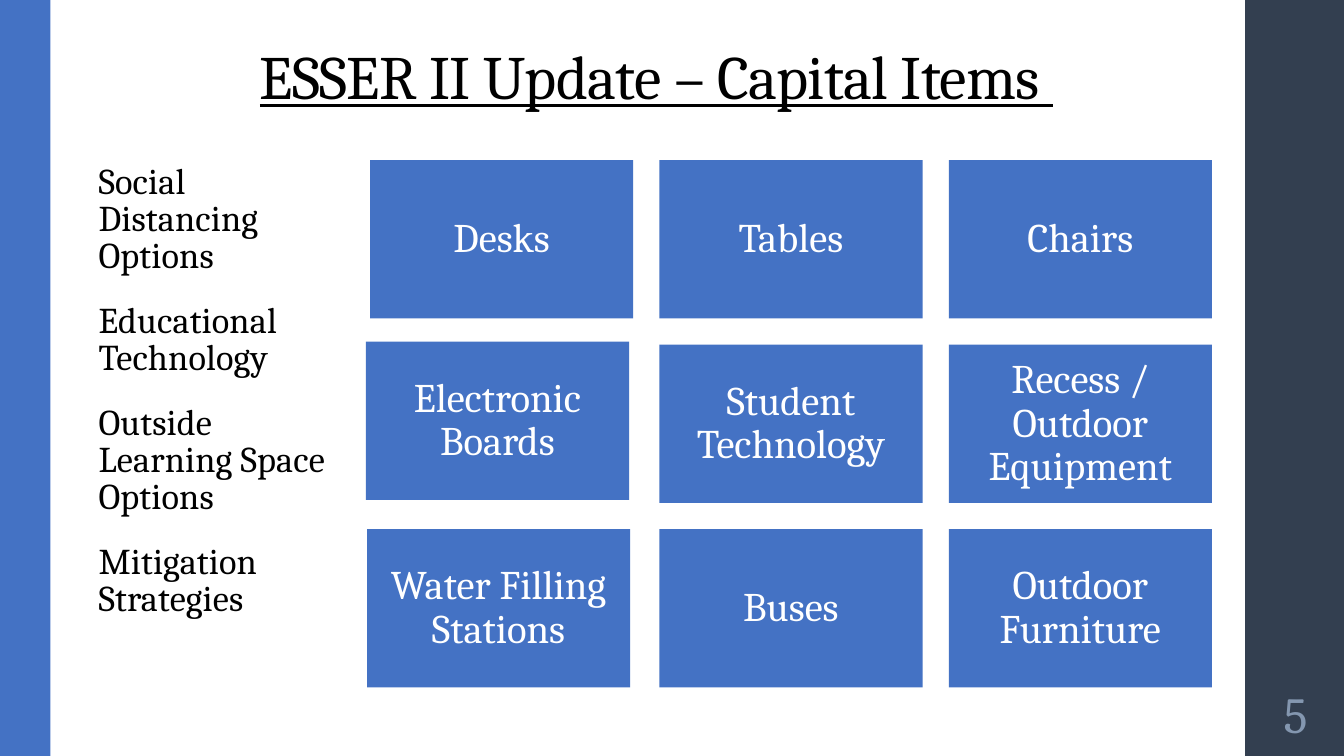
from pptx import Presentation
from pptx.dml.color import RGBColor
from pptx.enum.shapes import MSO_SHAPE
from pptx.enum.text import MSO_ANCHOR, PP_ALIGN
from pptx.util import Inches, Pt

COLORS = {
    "blue": "4472C4",
    "navy": "333F50",
    "number": "8497B0",
    "white": "FFFFFF",
    "black": "000000",
}
FONT = "Cambria"

TITLE = "ESSER II Update – Capital Items "
STRATEGIES = [
    "Social Distancing Options",
    "Educational Technology",
    "Outside Learning Space Options",
    "Mitigation Strategies",
]
CAPITAL_ITEMS = [
    ["Desks", "Tables", "Chairs"],
    ["Electronic Boards", "Student Technology", "Recess / Outdoor Equipment"],
    ["Water Filling Stations", "Buses", "Outdoor Furniture"],
]
# Small shifts (x, y) of the first tile in each row
FIRST_TILE_SHIFTS = [(0, 0), (-0.04, -0.03), (-0.03, 0)]
TILE_WIDTH, TILE_HEIGHT, TILE_GAP = 2.61, 1.57, 0.26


def add_block(slide, box, color):
    """Add a plain filled rectangle."""
    block = slide.shapes.add_shape(MSO_SHAPE.RECTANGLE, *map(Inches, box))
    block.shadow.inherit = False
    block.fill.solid()
    block.fill.fore_color.rgb = RGBColor.from_string(COLORS[color])
    block.line.fill.background()
    return block


def write_text(holder, paragraphs, *, size, color, align=PP_ALIGN.CENTER,
               anchor=MSO_ANCHOR.MIDDLE, margins=(0.1, 0.05), line_spacing=1.0,
               before=0, after=0, underline=False, tracking=0):
    """Fill a shape with one run per paragraph."""
    frame = holder.text_frame
    frame.word_wrap = True
    frame.vertical_anchor = anchor
    frame.margin_left = frame.margin_right = Inches(margins[0])
    frame.margin_top = frame.margin_bottom = Inches(margins[1])
    for index, text in enumerate(paragraphs):
        paragraph = frame.add_paragraph() if index else frame.paragraphs[0]
        paragraph.alignment = align
        paragraph.line_spacing = line_spacing
        paragraph.space_before = Pt(before)
        paragraph.space_after = Pt(after)
        run = paragraph.add_run()
        run.text = text
        run.font.name = FONT
        run.font.size = Pt(size)
        run.font.underline = underline
        run.font.color.rgb = RGBColor.from_string(COLORS[color])
        if tracking:
            run.font._element.set("spc", str(round(tracking * 100)))


def add_side_bands(slide, left, top, width, height):
    add_block(slide, (left + width - 0.98, top, 0.98, height), "navy")
    add_block(slide, (left, top, 0.5, height), "blue")


def add_title(slide, *box):
    title = slide.shapes.add_textbox(*map(Inches, box))
    write_text(title, [TITLE], size=44, color="black", anchor=MSO_ANCHOR.BOTTOM,
               line_spacing=0.85, underline=True, tracking=-0.5)


def add_page_number(slide, *box):
    number = slide.shapes.add_textbox(*map(Inches, box))
    write_text(number, ["5"], size=36, color="number", margins=(0.05, 0.05))


def add_item_grid(slide, left, top):
    for row, items in enumerate(CAPITAL_ITEMS):
        for column, item in enumerate(items):
            shift_x, shift_y = (0, 0) if column else FIRST_TILE_SHIFTS[row]
            x = left + column * (TILE_WIDTH + TILE_GAP) + shift_x
            y = top + row * (TILE_HEIGHT + TILE_GAP) + shift_y
            tile = add_block(slide, (x, y, TILE_WIDTH, TILE_HEIGHT), "blue")
            write_text(tile, [item], size=29, color="white",
                       margins=(0.12, 0.12), line_spacing=0.9)


def add_strategies(slide, *box):
    panel = add_block(slide, box, "white")
    write_text(panel, STRATEGIES, size=25.9, color="black", align=PP_ALIGN.LEFT,
               anchor=MSO_ANCHOR.TOP, line_spacing=0.85, before=14, after=6,
               tracking=0.1)


def main():
    deck = Presentation()
    deck.slide_width, deck.slide_height = Inches(13.33), Inches(7.5)
    slide = deck.slides.add_slide(deck.slide_layouts[6])
    add_side_bands(slide, 0, 0, 13.33, 7.5)
    add_title(slide, 1.21, 0.26, 10.6, 0.9)
    add_page_number(slide, 12.35, 6.75, 1, 0.65)
    add_item_grid(slide, 3.67, 1.59)
    add_strategies(slide, 0.88, 1.59, 2.59, 5.36)
    deck.save("out.pptx")


if __name__ == "__main__":
    main()
